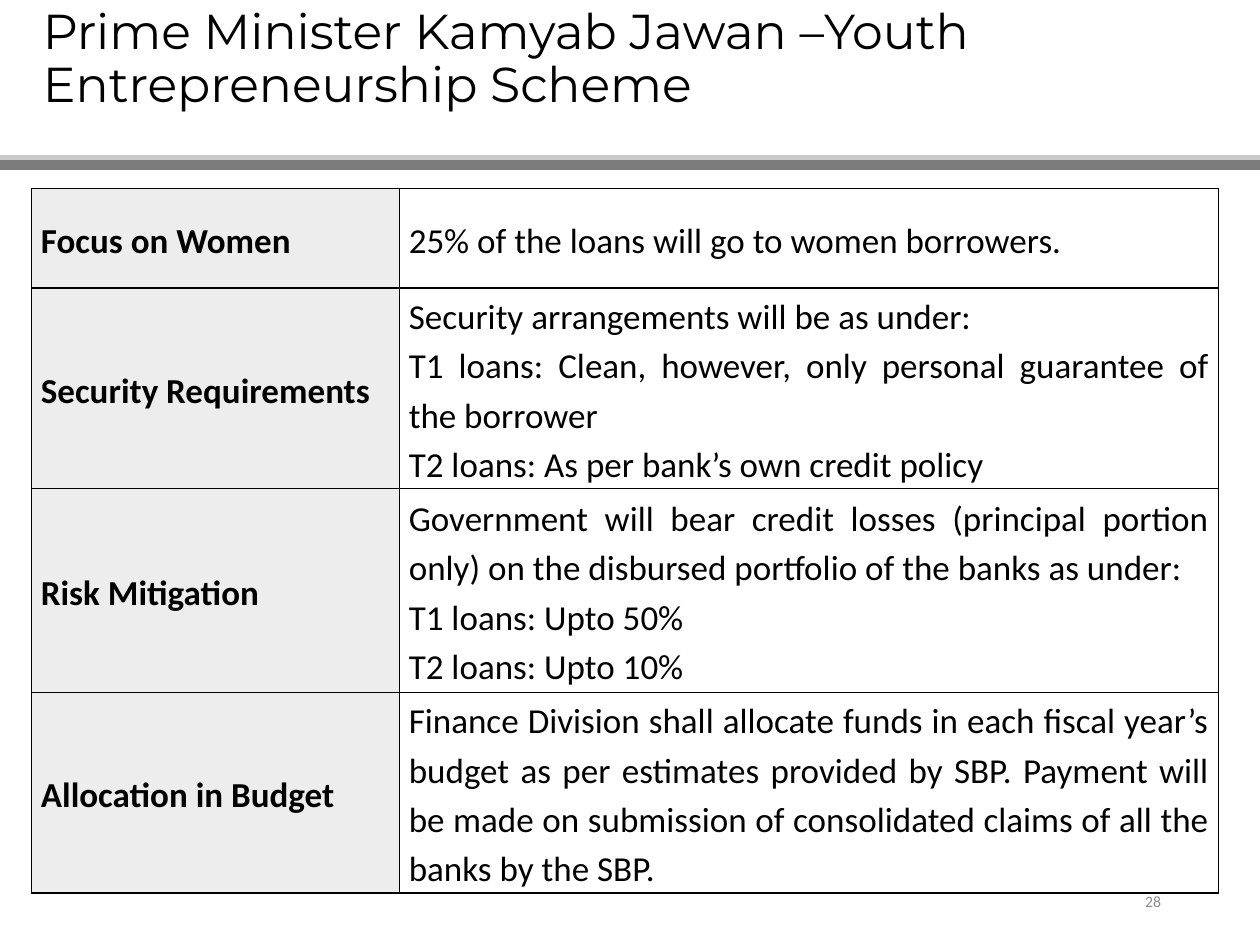
from dataclasses import dataclass

from lxml import etree
from pptx import Presentation
from pptx import util as u
from pptx.dml.color import RGBColor
from pptx.enum import shapes, text
from pptx.oxml.ns import qn

Pt = u.Pt
ALIGN = text.PP_ALIGN
ANCHOR = text.MSO_ANCHOR


@dataclass(frozen=True)
class Theme:
    ink: str = "000000"
    muted: str = "8C8C8C"
    label_fill: str = "EDEDED"
    rule_light: str = "C9C9C9"
    rule_dark: str = "7C7C7C"
    title_font: str = "Montserrat"
    body_font: str = "Calibri"
    title_size: int = 28
    body_size: int = 20
    number_size: int = 9


THEME = Theme()

ROWS = [
    ("Focus on Women", ["25% of the loans will go to women borrowers."]),
    ("Security Requirements", [
        "Security arrangements will be as under:",
        "T1 loans: Clean, however, only personal guarantee of the borrower",
        "T2 loans: As per bank’s own credit policy",
    ]),
    ("Risk Mitigation", [
        "Government will bear credit losses (principal portion only) on the "
        "disbursed portfolio of the banks as under:",
        "T1 loans: Upto 50%",
        "T2 loans: Upto 10%",
    ]),
    ("Allocation in Budget", [
        "Finance Division shall allocate funds in each fiscal year’s budget as "
        "per estimates provided by SBP. Payment will be made on submission of "
        "consolidated claims of all the banks by the SBP.",
    ]),
]
COL_WIDTHS = [210.24, 468]
ROW_HEIGHTS = [56.9, 114.5, 116.6, 114.5]


def write(tf, lines, size=THEME.body_size, font=THEME.body_font,
          color=THEME.ink, bold=False, align=ALIGN.LEFT, spacing=1.0):
    """Fill a text frame, one paragraph for each line."""
    tf.word_wrap = True
    for i, line in enumerate(lines):
        p = tf.paragraphs[0] if i == 0 else tf.add_paragraph()
        p.alignment, p.line_spacing = align, spacing
        r = p.add_run()
        r.text = line
        r.font.name, r.font.size, r.font.bold = font, Pt(size), bold
        r.font.color.rgb = RGBColor.from_string(color)


def add_text(s, box, line, anchor=ANCHOR.MIDDLE, bottom=3.6, **fmt):
    tf = s.shapes.add_textbox(*map(Pt, box)).text_frame
    tf.vertical_anchor = anchor
    tf.margin_bottom = Pt(bottom)
    write(tf, [line], **fmt)


def add_rule(s, y, width, color):
    ln = s.shapes.add_connector(shapes.MSO_CONNECTOR.STRAIGHT,
                                0, Pt(y), width, Pt(y))
    ln.line.color.rgb = RGBColor.from_string(color)
    ln.line.width = Pt(6)
    etree.SubElement(ln._element.spPr, qn("a:effectLst"))


def set_borders(cell, color=THEME.ink, width=1):
    tc_pr = cell._tc.get_or_add_tcPr()
    for i, side in enumerate(("lnL", "lnR", "lnT", "lnB")):
        ln = etree.Element(qn(f"a:{side}"), w=str(Pt(width)))
        fill = etree.SubElement(ln, qn("a:solidFill"))
        etree.SubElement(fill, qn("a:srgbClr"), val=color)
        tc_pr.insert(i, ln)  # borders come before the fill


def fill_cell(cell, lines, fill=None, **fmt):
    cell.vertical_anchor = ANCHOR.MIDDLE
    cell.margin_left = cell.margin_right = Pt(5.4)
    cell.margin_top = cell.margin_bottom = 0
    if fill:
        cell.fill.solid()
        cell.fill.fore_color.rgb = RGBColor.from_string(fill)
    else:
        cell.fill.background()
    set_borders(cell)
    write(cell.text_frame, lines, spacing=1.15, **fmt)


def add_scheme_table(s, left, top):
    table = s.shapes.add_table(
        len(ROWS), len(COL_WIDTHS), Pt(left), Pt(top),
        Pt(sum(COL_WIDTHS)), Pt(sum(ROW_HEIGHTS))).table
    table.first_row = table.horz_banding = False
    for col, width in zip(table.columns, COL_WIDTHS):
        col.width = Pt(width)
    for row, height, (label, lines) in zip(table.rows, ROW_HEIGHTS, ROWS):
        row.height = Pt(height)
        fill_cell(row.cells[0], [label], fill=THEME.label_fill, bold=True)
        fill_cell(row.cells[1], lines, align=ALIGN.JUSTIFY)


def main():
    prs = Presentation()
    prs.slide_width, prs.slide_height = Pt(720), Pt(540)
    s = prs.slides.add_slide(prs.slide_layouts[6])

    # Double rule below the heading
    add_rule(s, 91.4, prs.slide_width, THEME.rule_light)
    add_rule(s, 94.3, prs.slide_width, THEME.rule_dark)

    # Slide number
    add_text(s, (508.5, 500.5, 162, 28.75), "28", size=THEME.number_size,
             color=THEME.muted, align=ALIGN.RIGHT)

    # Scheme details
    add_scheme_table(s, 18, 107.7)

    # Heading
    add_text(s, (17.5, 18, 648, 66),
             "Prime Minister Kamyab Jawan –Youth Entrepreneurship Scheme",
             anchor=ANCHOR.BOTTOM, bottom=19.5, size=THEME.title_size,
             font=THEME.title_font, spacing=0.9)

    prs.save("out.pptx")


if __name__ == "__main__":
    main()
